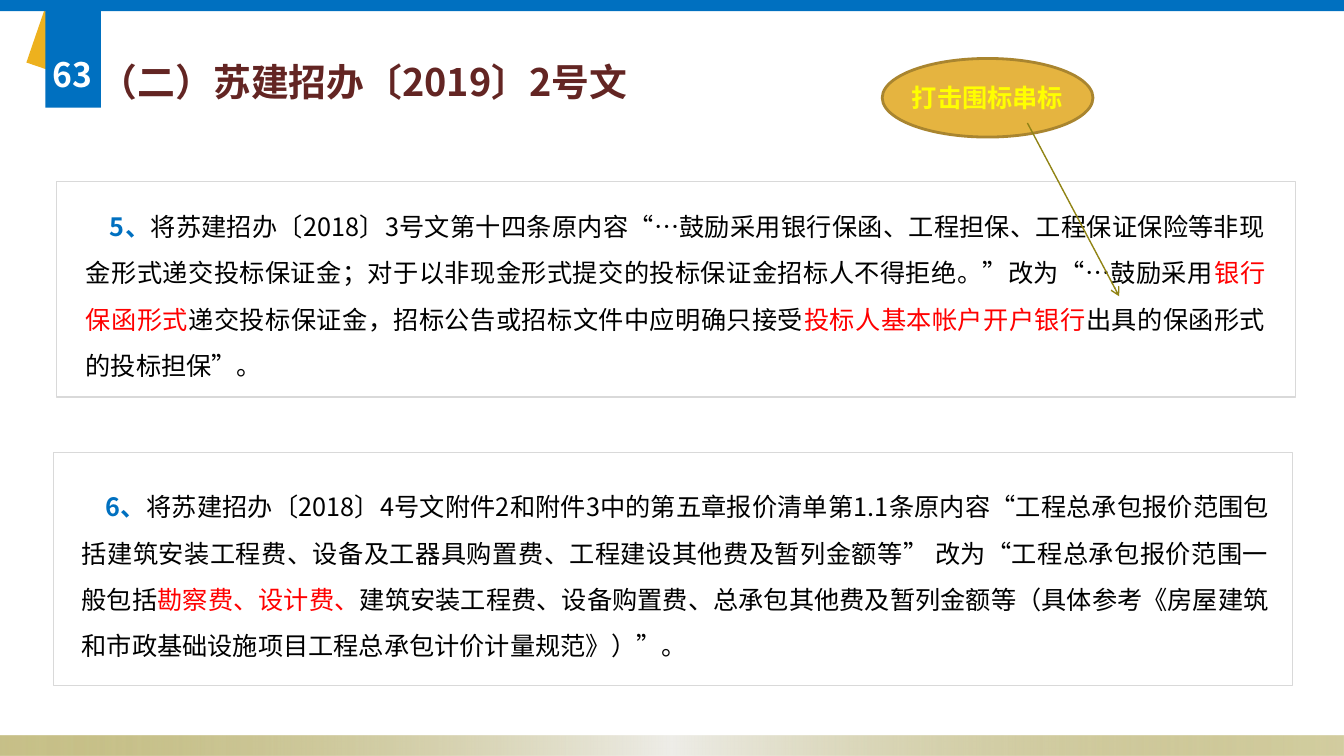
"""Build the slide on the 2019 No. 2 tender document."""
import pptx
import pptx.util
import pptx.oxml
import pptx.oxml.ns
import pptx.dml.color
import pptx.enum.shapes
import pptx.enum.text
import lxml.etree

Inches = pptx.util.Inches
Pt = pptx.util.Pt
KIND = pptx.enum.shapes.MSO_SHAPE
ALIGN = pptx.enum.text.PP_ALIGN
ANCHOR = pptx.enum.text.MSO_ANCHOR
qn = pptx.oxml.ns.qn
FONT = "Noto Sans CJK SC"
HUES = {"blue": "0070C0", "gold": "EDB11E", "white": "FFFFFF", "wine": "632523",
        "grey": "D9D9D9", "black": "000000", "red": "FF0000", "oval": "E5B440",
        "rim": "A9852F", "yellow": "FFFF00", "olive": "918415", "pale": "EEEDE8"}

deck = pptx.Presentation()
deck.slide_width, deck.slide_height = Inches(13.33), Inches(7.5)
slide = deck.slides.add_slide(deck.slide_layouts[3])
shapes = slide.shapes
title, *bodies = slide.placeholders


def draw(kind, area, fill, rim=None, width=1):
    shape = shapes.add_shape(kind, *map(Inches, area))
    shape.shadow.inherit = False
    shape.fill.solid()
    shape.fill.fore_color.rgb = pptx.dml.color.RGBColor.from_string(HUES[fill])
    if rim:
        shape.line.color.rgb = pptx.dml.color.RGBColor.from_string(HUES[rim])
        shape.line.width = Pt(width)
    else:
        shape.line.fill.background()
    return shape


def write(par, text, size, hue, bold=True, face=FONT):
    run = par.add_run()
    run.text = text
    font = run.font
    font.size, font.bold, font.name = Pt(size), bold, face
    font.color.rgb = pptx.dml.color.RGBColor.from_string(HUES[hue])
    east = lxml.etree.SubElement(font._element, qn("a:ea"))
    east.set("typeface", FONT)


band = draw(KIND.RECTANGLE, (0, 7.3, 13.33, 0.2), "olive")
stops = "".join(
    f'<a:gs pos="{pos}"><a:srgbClr val="{HUES[hue]}"><a:alpha val="{alpha}"/></a:srgbClr></a:gs>'
    for pos, hue, alpha in [(0, "olive", 50000), (50000, "pale", 100000), (100000, "olive", 40000)])
blend = pptx.oxml.parse_xml(
    '<a:gradFill xmlns:a="http://schemas.openxmlformats.org/drawingml/2006/main">'
    f'<a:gsLst>{stops}</a:gsLst><a:lin ang="0" scaled="0"/></a:gradFill>')
props = band.element.spPr
props.replace(props.find(qn("a:solidFill")), blend)

flap = draw(KIND.RECTANGLE, (0.24, 0.25, 0.54, 0.34), "gold")
flap.rotation = 108.9
draw(KIND.RECTANGLE, (0, 0, 13.33, 0.11), "blue")
draw(KIND.RECTANGLE, (0.45, 0.11, 0.55, 0.96), "blue")
page = shapes.add_textbox(*map(Inches, (0.38, 0.49, 0.67, 0.5))).text_frame
page.word_wrap = False
page.paragraphs[0].alignment = ALIGN.CENTER
write(page.paragraphs[0], "63", 24, "white")

title.left, title.top, title.width, title.height = map(Inches, (0.89, 0.53, 6.63, 0.56))
title.text_frame.auto_size = pptx.enum.text.MSO_AUTO_SIZE.NONE
title.text_frame.vertical_anchor = ANCHOR.MIDDLE
head = title.text_frame.paragraphs[0]
head.alignment = ALIGN.LEFT
write(head, "（二）苏建招办〔2019〕2号文", 27, "wine")

items = [
    ((0.56, 1.8, 12.29, 2.14), (0.68, 1.89, 11.97, 1.95), "5、", [
        ("将苏建招办〔2018〕3号文第十四条原内容“…鼓励采用银行保函、工程担保、工程保证保险等非现金形式递交投标保证金；"
         "对于以非现金形式提交的投标保证金招标人不得拒绝。”改为“…鼓励采用", "black"),
        ("银行保函形式", "red"),
        ("递交投标保证金，招标公告或招标文件中应明确只接受", "black"),
        ("投标人基本帐户开户银行", "red"),
        ("出具的保函形式的投标担保”。", "black")]),
    ((0.53, 4.49, 12.29, 2.31), (0.64, 4.67, 12.05, 1.95), "6、", [
        ("将苏建招办〔2018〕4号文附件2和附件3中的第五章报价清单第1.1条原内容“工程总承包报价范围包括建筑安装工程费、"
         "设备及工器具购置费、工程建设其他费及暂列金额等” 改为“工程总承包报价范围一般包括", "black"),
        ("勘察费、设计费、", "red"),
        ("建筑安装工程费、设备购置费、总承包其他费及暂列金额等（具体参考"
         "《房屋建筑和市政基础设施项目工程总承包计价计量规范》）”。", "black")]),
]
for body, (frame, area, mark, parts) in zip(bodies, items):
    box = draw(KIND.RECTANGLE, frame, "white", "grey")
    body.element.addprevious(box.element)
    body.left, body.top, body.width, body.height = map(Inches, area)
    body.text_frame.auto_size = pptx.enum.text.MSO_AUTO_SIZE.NONE
    par = body.text_frame.paragraphs[0]
    par.alignment = ALIGN.JUSTIFY
    par.line_spacing, par.space_before = Pt(33), Pt(12)
    rules = par._p.get_or_add_pPr()
    rules.set("marL", str(Inches(0.07)))
    rules.set("indent", str(Inches(0.24)))
    lxml.etree.SubElement(rules, qn("a:buNone"))
    write(par, mark, 18, "blue")
    for text, hue in parts:
        write(par, text, 18, hue, False)

oval = draw(KIND.OVAL, (8.75, 0.58, 2.09, 0.78), "oval", "rim", 2)
oval.text_frame.word_wrap = False
oval.text_frame.vertical_anchor = ANCHOR.MIDDLE
label = oval.text_frame.paragraphs[0]
label.alignment = ALIGN.CENTER
write(label, "打击围标串标", 18, "yellow", face="Roboto")

arrow = shapes.add_connector(pptx.enum.shapes.MSO_CONNECTOR.STRAIGHT,
                             *map(Inches, (10.19, 1.22, 11.1, 2.94)))
arrow.line.color.rgb = pptx.dml.color.RGBColor.from_string(HUES["olive"])
arrow.line.width = Pt(1)
tip = lxml.etree.SubElement(arrow.line._get_or_add_ln(), qn("a:tailEnd"))
tip.set("type", "arrow")
lxml.etree.SubElement(arrow.element.spPr, qn("a:effectLst"))

deck.save("out.pptx")
